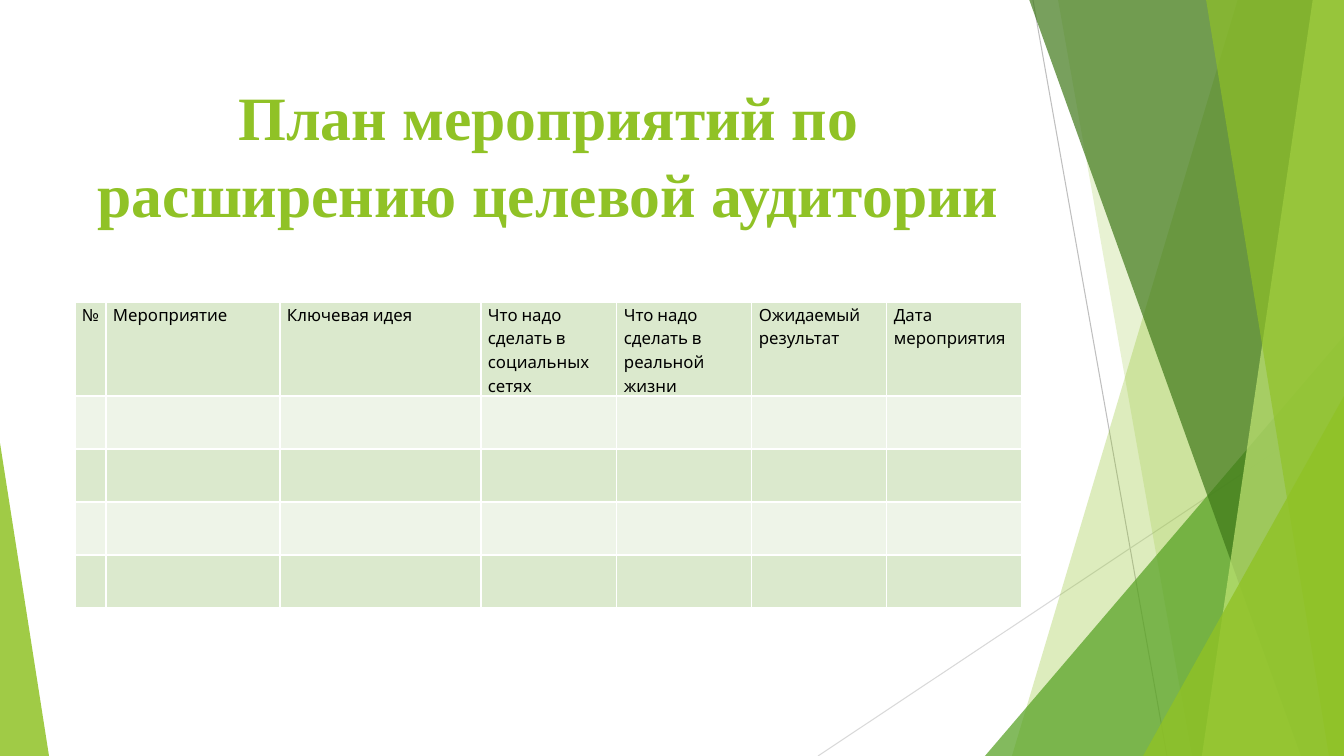
from dataclasses import dataclass

from lxml.etree import SubElement
from pptx import Presentation
from pptx.dml.color import RGBColor
from pptx.enum.shapes import MSO_CONNECTOR as Conn, MSO_SHAPE as Kind
from pptx.enum.text import MSO_ANCHOR as Anchor, PP_ALIGN as Align
from pptx.oxml import parse_xml
from pptx.oxml.ns import nsdecls, qn
from pptx.util import Emu, Pt

WIDE, HIGH = 1344, 756
GREEN = "90C226"
BANDS = ("DBE9CD", "EEF4E8")


@dataclass(frozen=True)
class Ray:
    start: tuple[int, int]
    end: tuple[int, int]
    color: str


@dataclass(frozen=True)
class Panel:
    """Slanted band that runs to the right edge of the slide."""
    top: int
    foot: int
    color: str
    alpha: int


@dataclass(frozen=True)
class Wedge:
    """Right triangle that stands on the bottom edge of the slide."""
    left: int
    top: int
    right: int
    peak: int
    color: str
    alpha: int


@dataclass(frozen=True)
class Column:
    head: str
    width: int
    align: Align = Align.LEFT


RAYS = (
    Ray((1033, 0), (1167, HIGH), "BFBFBF"),
    Ray((WIDE, 406), (818, HIGH), "D9D9D9"),
)
DECOR = (
    Panel(1238, 1012, GREEN, 30),
    Panel(1058, 1192, GREEN, 20),
    Wedge(985, 336, WIDE, 1, "54A021", 72),
    Panel(1029, 1301, "3F7819", 70),
    Panel(1313, 1202, "C0E474", 70),
    Panel(1206, 1329, GREEN, 65),
    Wedge(1143, 396, WIDE, 1, GREEN, 80),
    Wedge(0, 443, 49, 0, GREEN, 85),
)
COLUMNS = (
    Column("№", 31, Align.JUSTIFY),
    Column("Мероприятие", 174, Align.JUSTIFY),
    Column("Ключевая идея", 201),
    Column("Что надо сделать в социальных сетях", 136),
    Column("Что надо сделать в реальной жизни", 135),
    Column("Ожидаемый результат", 135),
    Column("Дата мероприятия", 135),
)
ROWS = (94, 53, 53, 53, 53)


def px(size: int) -> Emu:
    return Emu(round(size * 914400 / 100.8))


def rgb(code: str) -> RGBColor:
    return RGBColor.from_string(code)


def paint(shape, color: str, alpha: int) -> None:
    shape.shadow.inherit = False
    shape.line.fill.background()
    shape.fill.solid()
    shape.fill.fore_color.rgb = rgb(color)
    tint = shape.fill._xPr.find(qn("a:solidFill"))[0]
    SubElement(tint, qn("a:alpha"), val=str(alpha * 1000))


def draw_ray(slide, ray: Ray) -> None:
    line = slide.shapes.add_connector(
        Conn.STRAIGHT, *map(px, ray.start + ray.end))
    line.line.color.rgb = rgb(ray.color)
    line.line.width = Pt(0.75)
    SubElement(line._element.spPr, qn("a:effectLst"))


def draw_panel(slide, panel: Panel) -> None:
    form = slide.shapes.build_freeform(panel.top, -1, scale=px(1))
    form.add_line_segments(
        [(WIDE, -1), (WIDE, HIGH), (panel.foot, HIGH)], close=True)
    paint(form.convert_to_shape(), panel.color, panel.alpha)


def draw_wedge(slide, wedge: Wedge) -> None:
    shape = slide.shapes.add_shape(
        Kind.ISOSCELES_TRIANGLE, px(wedge.left), px(wedge.top),
        px(wedge.right - wedge.left), px(HIGH - wedge.top))
    shape.adjustments[0] = wedge.peak
    paint(shape, wedge.color, wedge.alpha)


def draw_title(slide, text: str) -> None:
    frame = slide.shapes.add_textbox(px(75), px(68), px(947), px(145)).text_frame
    frame.word_wrap = True
    frame.margin_top = px(7)
    para = frame.paragraphs[0]
    para.text = text
    para.alignment = Align.CENTER
    para.line_spacing = 1.05
    para.font.name = "Times New Roman"
    para.font.size = Pt(44)
    para.font.bold = True
    para.font.color.rgb = rgb(GREEN)


def style_cell(cell, color: str) -> None:
    cell.fill.solid()
    cell.fill.fore_color.rgb = rgb(color)
    cell.margin_left = cell.margin_right = px(7)
    cell.margin_top = cell.margin_bottom = 0
    cell.vertical_anchor = Anchor.TOP
    # White borders go ahead of the fill
    for spot, side in enumerate("LRTB"):
        cell._tc.tcPr.insert(spot, parse_xml(
            f'<a:ln{side} {nsdecls("a")} w="12700"><a:solidFill>'
            f'<a:srgbClr val="FFFFFF"/></a:solidFill></a:ln{side}>'))


def write_head(cell, column: Column) -> None:
    para = cell.text_frame.paragraphs[0]
    para.text = column.head
    para.alignment = column.align
    para.line_spacing = 1.15
    para.space_before = para.space_after = Pt(2)
    para.font.name = "Cabin"
    para.font.size = Pt(12)
    para.font.color.rgb = rgb("000000")


def draw_plan(slide) -> None:
    width = sum(column.width for column in COLUMNS)
    table = slide.shapes.add_table(
        len(ROWS), len(COLUMNS), px(75), px(302), px(width), px(sum(ROWS))).table
    table.first_row = table.horz_banding = False
    for index, height in enumerate(ROWS):
        table.rows[index].height = px(height)
        for cell in table.rows[index].cells:
            style_cell(cell, BANDS[index % 2])
    for index, column in enumerate(COLUMNS):
        table.columns[index].width = px(column.width)
        write_head(table.cell(0, index), column)


def main() -> None:
    deck = Presentation()
    deck.slide_width, deck.slide_height = px(WIDE), px(HIGH)
    slide = deck.slides.add_slide(deck.slide_layouts[6])
    # Green backdrop
    for ray in RAYS:
        draw_ray(slide, ray)
    for part in DECOR:
        if isinstance(part, Panel):
            draw_panel(slide, part)
        else:
            draw_wedge(slide, part)
    # Heading and plan
    draw_title(slide, "План мероприятий по расширению целевой аудитории")
    draw_plan(slide)
    deck.save("out.pptx")


if __name__ == "__main__":
    main()
